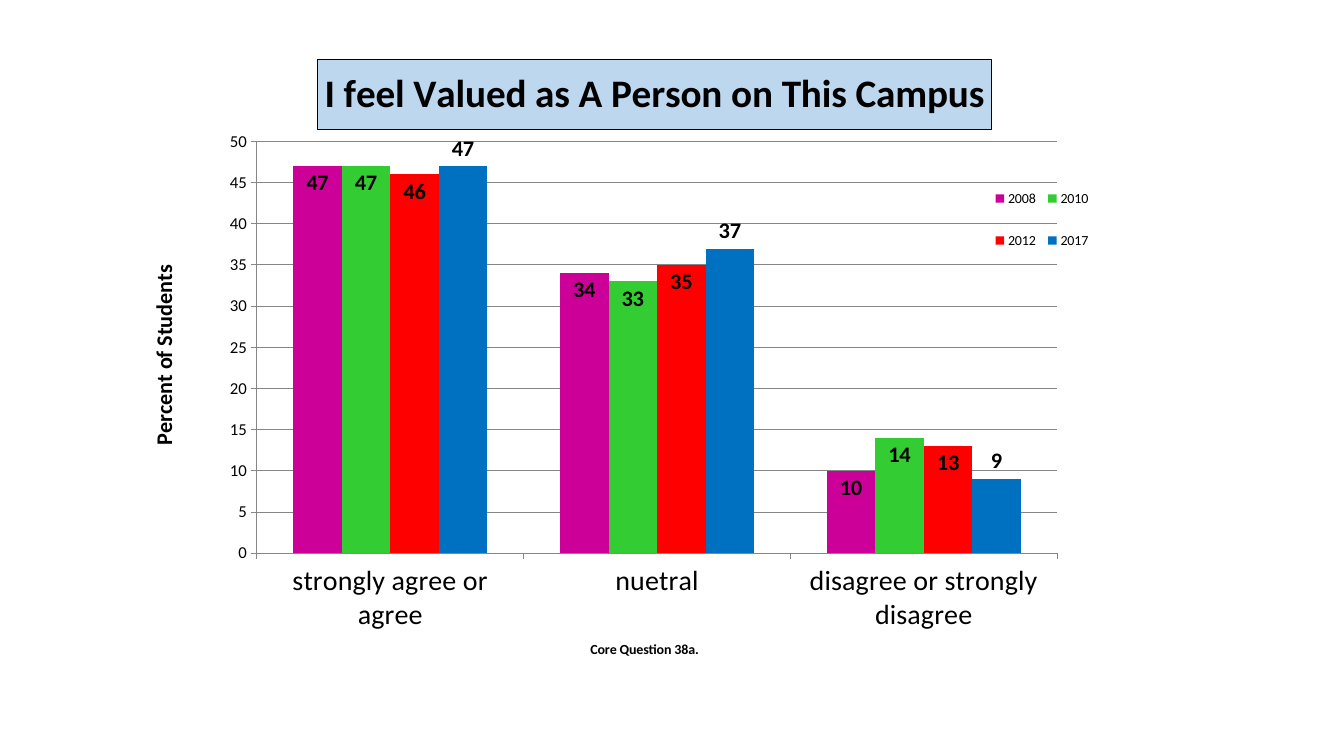
from dataclasses import dataclass

from lxml.etree import SubElement
from pptx import Presentation
from pptx.chart.data import CategoryChartData
from pptx.dml.color import RGBColor
from pptx.enum.chart import XL_CHART_TYPE, XL_LABEL_POSITION, XL_LEGEND_POSITION, XL_TICK_MARK
from pptx.oxml import parse_xml
from pptx.oxml.ns import nsdecls, qn
from pptx.util import Pt


@dataclass(frozen=True)
class Theme:
    font: str = "Calibri"
    ink: str = "000000"
    line: str = "868686"
    title_fill: str = "BDD7EE"
    title_size: int = 28
    category_size: int = 20
    label_size: int = 16
    value_size: int = 12
    small_size: int = 10


THEME = Theme()
CATEGORIES = ["strongly agree or agree", "nuetral", "disagree or strongly disagree"]
INSIDE, OUTSIDE = XL_LABEL_POSITION.INSIDE_END, XL_LABEL_POSITION.OUTSIDE_END
YEARS = [
    ("2008", (47, 34, 10), "CC0099", INSIDE),
    ("2010", (47, 33, 14), "33CC33", INSIDE),
    ("2012", (46, 35, 13), "FF0000", INSIDE),
    ("2017", (47, 37, 9), "0070C0", OUTSIDE),
]


def style_font(font, size, bold=False):
    font.name = THEME.font
    font.size = Pt(size)
    font.bold = bold
    font.color.rgb = RGBColor.from_string(THEME.ink)


def write_text(frame, text, size, bold=True):
    span = frame.paragraphs[0].add_run()
    span.text = text
    style_font(span.font, size, bold)


def style_line(line, color, width=0.75):
    line.color.rgb = RGBColor.from_string(color)
    line.width = Pt(width)


def place(element, index, inner=False, **fractions):
    for old in element.findall(qn("c:layout")):
        element.remove(old)
    layout = parse_xml(f"<c:layout {nsdecls('c')}><c:manualLayout/></c:layout>")
    settings = {"layoutTarget": "inner"} if inner else {}
    settings.update(xMode="edge", yMode="edge", **fractions)
    for name, value in settings.items():
        SubElement(layout[0], qn(f"c:{name}")).set("val", str(value))
    element.insert(index, layout)


def add_axis_title(axis, text, size, x, y):
    write_text(axis.axis_title.text_frame, text, size)
    place(axis.axis_title._element, 1, x=x, y=y)


def style_axis(axis, size):
    style_font(axis.tick_labels.font, size)
    style_line(axis.format.line, THEME.line)
    axis.major_tick_mark = XL_TICK_MARK.OUTSIDE
    axis.minor_tick_mark = XL_TICK_MARK.NONE


def style_value_axis(axis):
    style_axis(axis, THEME.value_size)
    axis.minimum_scale = 0
    axis.maximum_scale = 50
    axis.major_unit = 5
    axis.has_major_gridlines = True
    style_line(axis.major_gridlines.format.line, THEME.line)
    add_axis_title(axis, "Percent of Students", THEME.label_size, x=0.03, y=0.36)


def style_category_axis(axis):
    style_axis(axis, THEME.category_size)
    add_axis_title(axis, "Core Question 38a.", THEME.small_size, x=0.44, y=0.97)


def style_series(series, color, position):
    series.format.fill.solid()
    series.format.fill.fore_color.rgb = RGBColor.from_string(color)
    series.invert_if_negative = False
    labels = series.data_labels
    labels.show_value = True
    labels.position = position
    style_font(labels.font, THEME.label_size, bold=True)


def add_chart_title(chart, text):
    chart.has_title = True
    title = chart.chart_title
    write_text(title.text_frame, text, THEME.title_size)
    title.format.fill.solid()
    title.format.fill.fore_color.rgb = RGBColor.from_string(THEME.title_fill)
    style_line(title.format.line, THEME.ink)
    place(title._element, 1, x=0.19, y=0.03)


def add_legend(chart):
    chart.has_legend = True
    legend = chart.legend
    legend.position = XL_LEGEND_POSITION.RIGHT
    legend.include_in_layout = False
    style_font(legend.font, THEME.small_size)
    place(legend._element, 1, x=0.81, y=0.2, w=0.1, h=0.18)


def add_survey_chart(page):
    data = CategoryChartData()
    data.categories = CATEGORIES
    for year, values, _, _ in YEARS:
        data.add_series(year, values)
    frame = page.shapes.add_chart(
        XL_CHART_TYPE.COLUMN_CLUSTERED, Pt(80), Pt(29.5), Pt(772.5), Pt(443), data
    )
    chart = frame.chart
    style_font(chart.font, THEME.small_size)
    plot = chart.plots[0]
    plot.gap_width = 150
    plot.overlap = 0
    plot.vary_by_categories = False
    for series, (_, _, color, position) in zip(plot.series, YEARS):
        style_series(series, color, position)
    style_value_axis(chart.value_axis)
    style_category_axis(chart.category_axis)
    add_chart_title(chart, "I feel Valued as A Person on This Campus")
    add_legend(chart)
    plot_area = chart._chartSpace.chart.plotArea
    place(plot_area, 0, inner=True, x=0.134, y=0.163, w=0.74, h=0.67)


def main():
    deck = Presentation()
    deck.slide_width, deck.slide_height = Pt(960), Pt(540)
    page = deck.slides.add_slide(deck.slide_layouts[6])
    add_survey_chart(page)
    deck.save("out.pptx")


if __name__ == "__main__":
    main()
